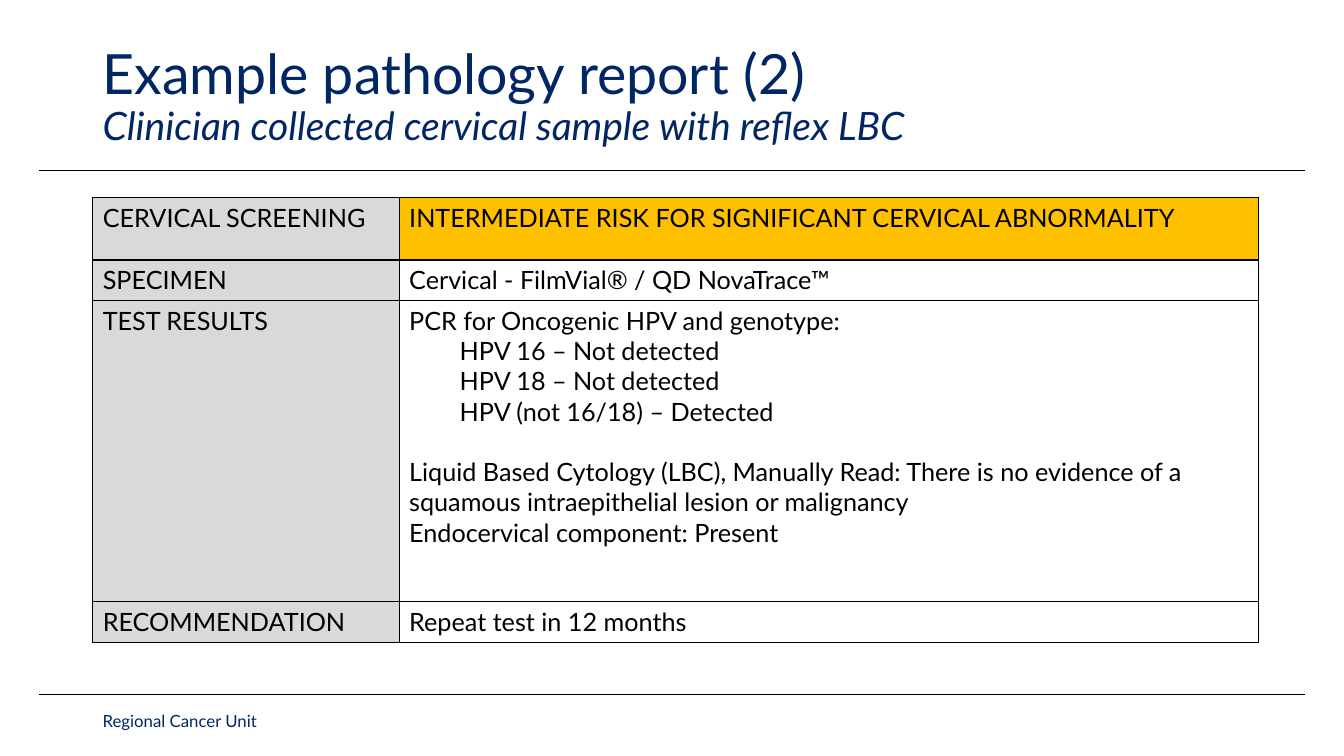
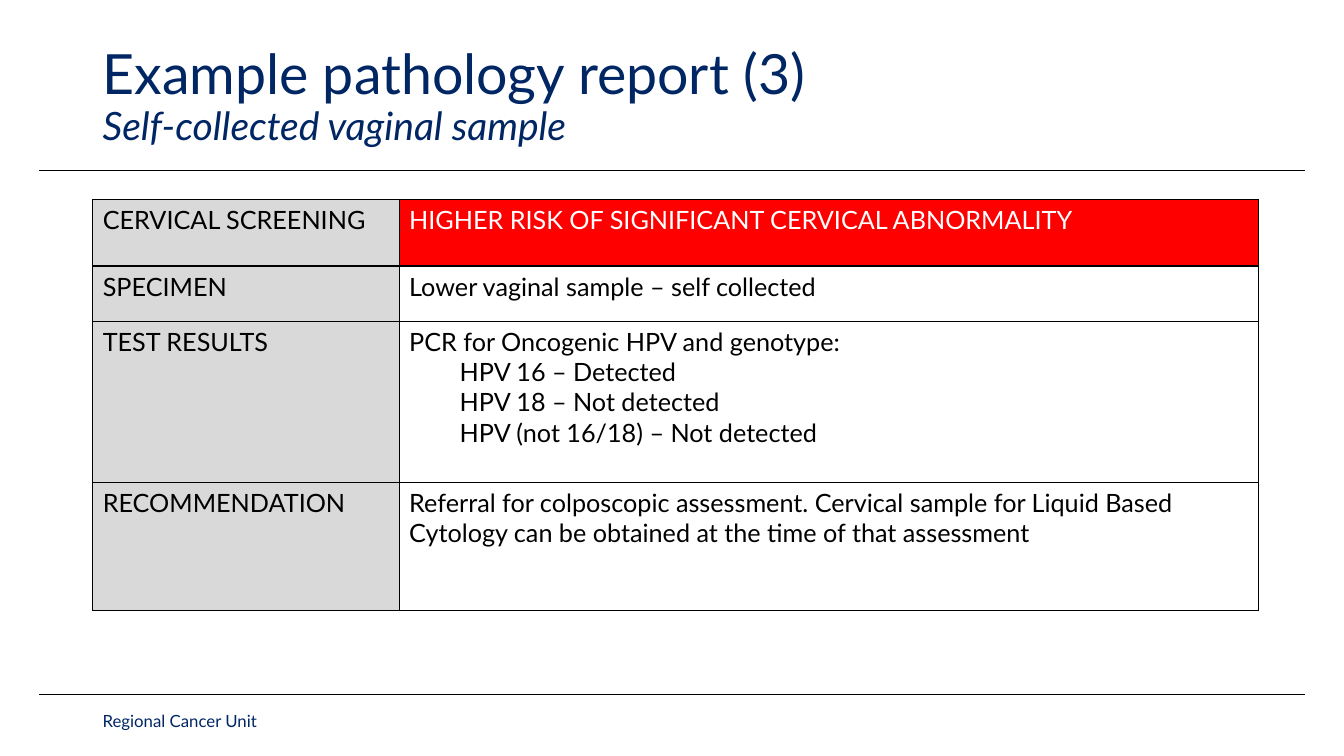
"""Build two example pathology report slides."""
from dataclasses import dataclass

from lxml import etree
from pptx import Presentation
from pptx.dml.color import RGBColor
from pptx.enum.shapes import MSO_CONNECTOR
from pptx.enum.text import MSO_ANCHOR
from pptx.oxml.ns import qn
from pptx.util import Inches, Pt

STRAIGHT = MSO_CONNECTOR.STRAIGHT
MIDDLE = MSO_ANCHOR.MIDDLE
SLIDE_WIDTH, SLIDE_HEIGHT = Inches(13.33), Inches(7.5)
BLANK_LAYOUT = 6

LEFT_MARGIN = 6.9
RULE_MARGIN = 2.93
RULE_LEVELS = (22.53, 91.87)
COLUMN_WIDTHS = (22.8, 63.92)


@dataclass(frozen=True)
class Theme:
    """Colours, font and sizes in points."""
    font: str = "Lato"
    navy: str = "002664"
    black: str = "000000"
    white: str = "FFFFFF"
    grey: str = "D9D9D9"
    amber: str = "FFC000"
    red: str = "FF0000"
    title_size: float = 39.6
    subtitle_size: float = 27.9
    body_size: float = 18
    footer_size: float = 12
    paragraph_gap: float = 21.6
    rule_width: float = 0.5
    border_width: float = 1


THEME = Theme()


@dataclass(frozen=True)
class Line:
    """One paragraph of a table cell."""
    text: str
    indent: float = 0
    gap: float = 0


@dataclass(frozen=True)
class Report:
    """The content of one slide; row heights are percentages of its height."""
    title: str
    subtitle: str
    risk: str
    risk_fill: str
    risk_color: str
    specimen: str
    results: tuple
    recommendation: str
    table_top: float
    row_heights: tuple


def across(percent):
    """Return a percentage of the slide width."""
    return round(SLIDE_WIDTH * percent / 100)


def down(percent):
    """Return a percentage of the slide height."""
    return round(SLIDE_HEIGHT * percent / 100)


def write(frame, text, size=THEME.body_size, color=THEME.black, italic=False,
          spacing=None, indent=0, gap=0):
    """Add one formatted paragraph, using the empty first one if there is one."""
    paragraph = frame.paragraphs[0] if not frame.text else frame.add_paragraph()
    if indent:
        paragraph._p.get_or_add_pPr().set("marL", str(Inches(indent)))
    if gap:
        paragraph.space_before = Pt(gap)
    if spacing:
        paragraph.line_spacing = spacing
    run = paragraph.add_run()
    run.text = text
    run.font.name = THEME.font
    run.font.size = Pt(size)
    run.font.italic = italic
    run.font.color.rgb = RGBColor.from_string(color)


def add_text_frame(slide, top, width, height):
    """Add a wrapped, middle-anchored text box at the left margin."""
    shape = slide.shapes.add_textbox(across(LEFT_MARGIN), down(top), across(width), down(height))
    frame = shape.text_frame
    frame.word_wrap = True
    frame.vertical_anchor = MIDDLE
    return frame


def add_rule(slide, level):
    """Draw a thin horizontal rule across the slide."""
    rule = slide.shapes.add_connector(STRAIGHT, across(RULE_MARGIN), down(level),
                                      across(100 - RULE_MARGIN), down(level))
    rule.line.color.rgb = RGBColor.from_string(THEME.black)
    rule.line.width = Pt(THEME.rule_width)
    etree.SubElement(rule._element.spPr, qn("a:effectLst"))


def add_frame(slide, title, subtitle):
    """Add the rules, footer and title block."""
    for level in RULE_LEVELS:
        add_rule(slide, level)
    footer = add_text_frame(slide, 92.67, 33.75, 5.33)
    write(footer, "Regional Cancer Unit", size=THEME.footer_size, color=THEME.navy)
    heading = add_text_frame(slide, 5.6, 79.75, 14.67)
    write(heading, title, size=THEME.title_size, color=THEME.navy, spacing=0.9)
    write(heading, subtitle, size=THEME.subtitle_size, color=THEME.navy, italic=True, spacing=0.9)


def style_cell(cell, fill):
    """Give a cell its borders and fill."""
    properties = cell._tc.get_or_add_tcPr()
    for side in ("a:lnL", "a:lnR", "a:lnT", "a:lnB"):
        border = etree.SubElement(properties, qn(side), w=str(Pt(THEME.border_width)))
        solid = etree.SubElement(border, qn("a:solidFill"))
        etree.SubElement(solid, qn("a:srgbClr"), val=THEME.black)
    cell.fill.solid()
    cell.fill.fore_color.rgb = RGBColor.from_string(fill)


def fill_cell(cell, lines, fill=THEME.white, color=THEME.black):
    """Style a cell and write its lines."""
    style_cell(cell, fill)
    for line in lines:
        write(cell.text_frame, line.text, color=color, indent=line.indent, gap=line.gap)


def add_report_table(slide, report):
    """Add the table of labels and findings."""
    rows = (
        ("CERVICAL SCREENING", (Line(report.risk),), report.risk_fill, report.risk_color),
        ("SPECIMEN", (Line(report.specimen),), THEME.white, THEME.black),
        ("TEST RESULTS", report.results, THEME.white, THEME.black),
        ("RECOMMENDATION", (Line(report.recommendation),), THEME.white, THEME.black),
    )
    table = slide.shapes.add_table(
        len(rows), len(COLUMN_WIDTHS), across(LEFT_MARGIN), down(report.table_top),
        across(sum(COLUMN_WIDTHS)), down(sum(report.row_heights))).table
    table.first_row = False
    table.horz_banding = False
    for column, width in zip(table.columns, COLUMN_WIDTHS):
        column.width = across(width)
    for row, height, (label, lines, fill, color) in zip(table.rows, report.row_heights, rows):
        row.height = down(height)
        label_cell, finding_cell = row.cells
        fill_cell(label_cell, (Line(label),), fill=THEME.grey)
        fill_cell(finding_cell, lines, fill=fill, color=color)


def genotype_lines(type_16, type_18, other):
    """Return the lines for the HPV genotype results."""
    results = (("HPV 16", type_16), ("HPV 18", type_18), ("HPV (not 16/18)", other))
    return (Line("PCR for Oncogenic HPV and genotype:"),
            *(Line(f"{name} – {result}", indent=0.5) for name, result in results))


REPORTS = (
    Report(
        title="Example pathology report (2)",
        subtitle="Clinician collected cervical sample with reflex LBC",
        risk="INTERMEDIATE RISK FOR SIGNIFICANT CERVICAL ABNORMALITY",
        risk_fill=THEME.amber,
        risk_color=THEME.black,
        specimen="Cervical - FilmVial® / QD NovaTrace™",
        results=(
            *genotype_lines("Not detected", "Not detected", "Detected"),
            Line("Liquid Based Cytology (LBC), Manually Read: There is no evidence of a "
                 "squamous intraepithelial lesion or malignancy", gap=THEME.paragraph_gap),
            Line("Endocervical component: Present"),
        ),
        recommendation="Repeat test in 12 months",
        table_top=26.13,
        row_heights=(8.27, 5.33, 39.87, 5.33),
    ),
    Report(
        title="Example pathology report (3)",
        subtitle="Self-collected vaginal sample",
        risk="HIGHER RISK OF SIGNIFICANT CERVICAL ABNORMALITY",
        risk_fill=THEME.red,
        risk_color=THEME.white,
        specimen="Lower vaginal sample – self collected",
        results=genotype_lines("Detected", "Not detected", "Not detected"),
        recommendation="Referral for colposcopic assessment. Cervical sample for Liquid Based "
                       "Cytology can be obtained at the time of that assessment",
        table_top=26.4,
        row_heights=(8.8, 7.33, 21.33, 16.93),
    ),
)


def main():
    """Build and save the presentation."""
    presentation = Presentation()
    presentation.slide_width = SLIDE_WIDTH
    presentation.slide_height = SLIDE_HEIGHT
    for report in REPORTS:
        slide = presentation.slides.add_slide(presentation.slide_layouts[BLANK_LAYOUT])
        add_frame(slide, report.title, report.subtitle)
        add_report_table(slide, report)
    presentation.save("out.pptx")


if __name__ == "__main__":
    main()
